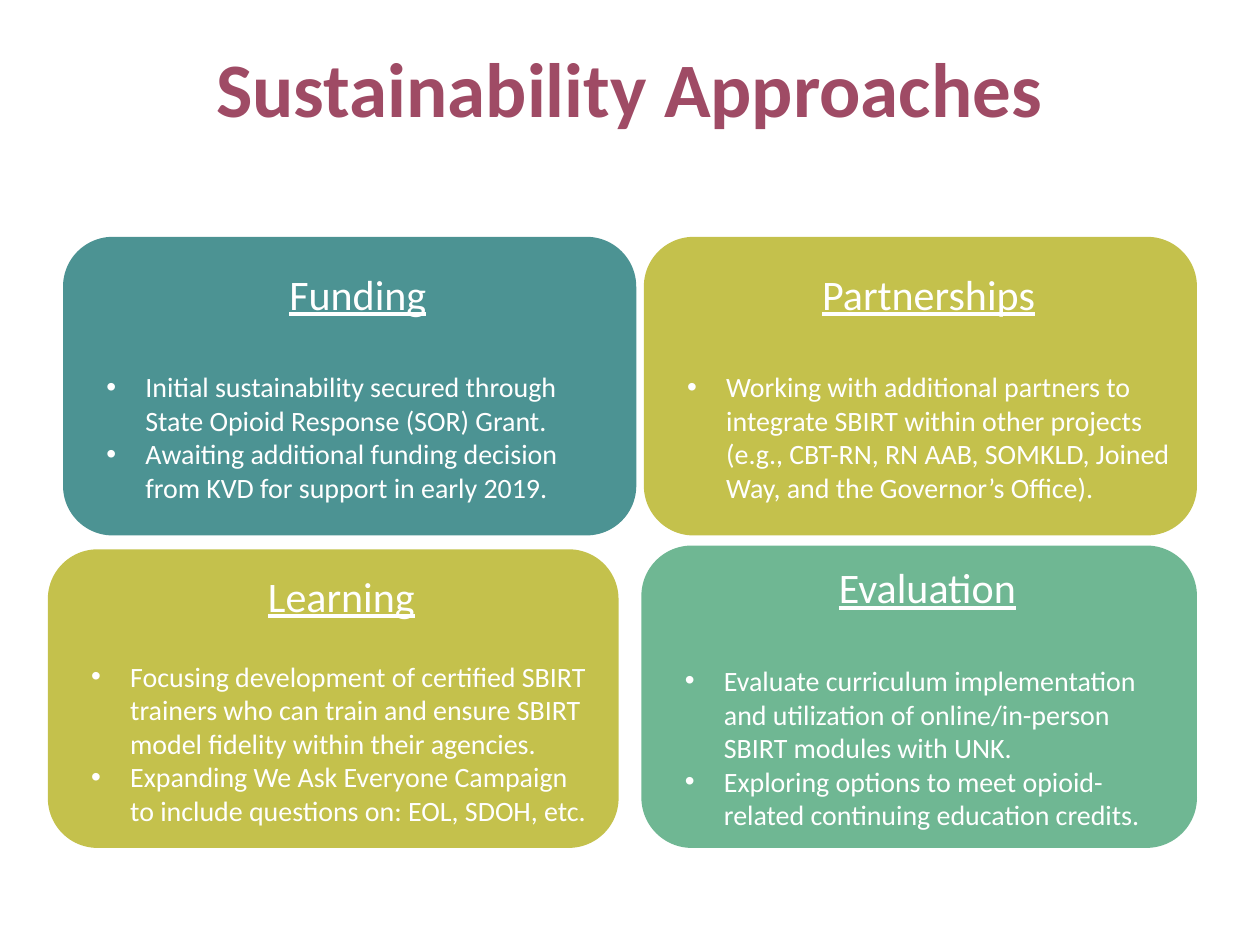
from dataclasses import dataclass
from lxml.etree import SubElement
from pptx import Presentation
from pptx.dml.color import RGBColor
from pptx.enum.shapes import MSO_SHAPE
from pptx.enum.text import MSO_ANCHOR, PP_ALIGN
from pptx.oxml.ns import qn
from pptx.util import Inches, Pt


@dataclass(frozen=True)
class Theme:
    font: str = "Calibri"
    plum: str = "9F4B65"
    white: str = "FFFFFF"
    teal: str = "006666"
    green: str = "339966"
    olive: str = "ACA800"
    alpha: int = 70
    title: int = 44
    head: int = 24
    body: int = 16


THEME = Theme()
TITLE = "Sustainability Approaches"
CARDS = [
    ("Funding", THEME.teal, (0.5, 1.88, 4.55, 2.37), 29.3, [
        "Initial sustainability secured through State Opioid Response (SOR) Grant.",
        "Awaiting additional funding decision from KVD for support in early 2019.",
    ]),
    ("Evaluation", THEME.green, (5.09, 4.33, 4.41, 2.4), 29.3, [
        "Evaluate curriculum implementation and utilization of online/in-person SBIRT modules with UNK.",
        "Exploring options to meet opioid-related continuing education credits.",
    ]),
    ("Partnerships", THEME.olive, (5.11, 1.88, 4.39, 2.37), 29.3, [
        "Working with additional partners to integrate SBIRT within other projects "
        "(e.g., CBT-RN, RN AAB, SOMKLD, Joined Way, and the Governor’s Office).",
    ]),
    ("Learning", THEME.olive, (0.38, 4.36, 4.53, 2.37), 22, [
        "Focusing development of certified SBIRT trainers who can train and ensure "
        "SBIRT model fidelity within their agencies.",
        "Expanding We Ask Everyone Campaign to include questions on: EOL, SDOH, etc.",
    ]),
]


def add_run(para, text, size, color):
    run = para.add_run()
    run.text = text
    font = run.font
    font.name, font.size = THEME.font, Pt(size)
    font.color.rgb = RGBColor.from_string(color)
    return font


def indent(para, left, first=0):
    props = para._p.get_or_add_pPr()
    props.set("marL", str(Inches(left)))
    props.set("indent", str(Inches(first)))
    return props


def add_card(slide, head, color, box, gap, items):
    card = slide.shapes.add_shape(MSO_SHAPE.ROUNDED_RECTANGLE, *map(Inches, box))
    card.shadow.inherit = False
    card.line.fill.background()
    card.fill.solid()
    card.fill.fore_color.rgb = RGBColor.from_string(color)
    tint = card._element.spPr.find(qn("a:solidFill"))[0]
    SubElement(tint, qn("a:alpha"), val=str(THEME.alpha * 1000))
    frame = card.text_frame
    frame.word_wrap = True
    frame.vertical_anchor = MSO_ANCHOR.MIDDLE
    para = frame.paragraphs[0]
    para.alignment = PP_ALIGN.CENTER
    para.space_after = Pt(gap)
    indent(para, 0.13)
    add_run(para, head, THEME.head, THEME.white).underline = True
    for item in items:
        para = frame.add_paragraph()
        para.alignment = PP_ALIGN.LEFT
        props = indent(para, 0.44, -0.31)
        SubElement(props, qn("a:buFont"), typeface="Arial")
        SubElement(props, qn("a:buChar"), char="•")
        add_run(para, item, THEME.body, THEME.white)


def main():
    deck = Presentation()
    deck.slide_width, deck.slide_height = Inches(10), Inches(7.5)
    slide = deck.slides.add_slide(deck.slide_layouts[6])
    box = slide.shapes.add_textbox(*map(Inches, (0.5, 0.06, 9, 1.25)))
    frame = box.text_frame
    frame.word_wrap = True
    frame.vertical_anchor = MSO_ANCHOR.MIDDLE
    para = frame.paragraphs[0]
    para.alignment = PP_ALIGN.CENTER
    add_run(para, TITLE, THEME.title, THEME.plum).bold = True
    for card in CARDS:
        add_card(slide, *card)
    deck.save("out.pptx")


if __name__ == "__main__":
    main()
